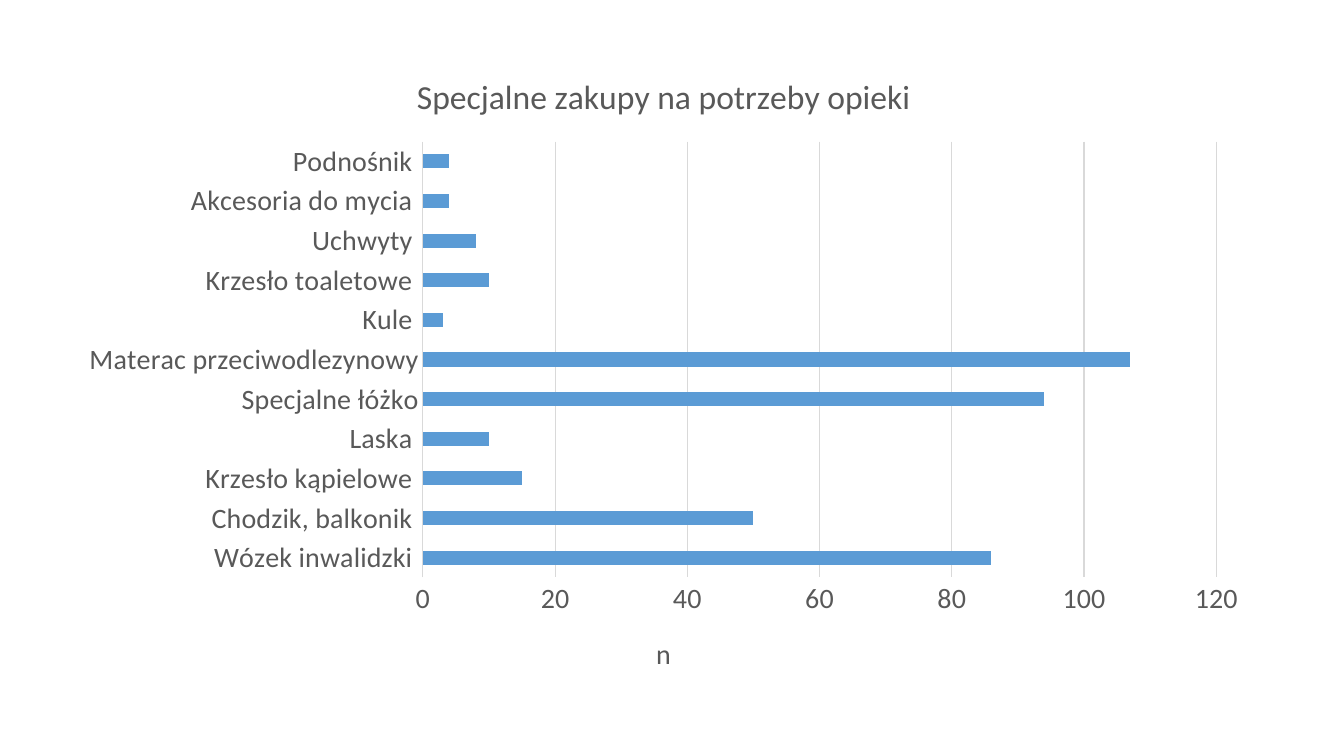
from pptx import Presentation
from pptx.chart.data import CategoryChartData
from pptx.dml.color import RGBColor
from pptx.enum.chart import XL_CHART_TYPE as ChartType, XL_TICK_MARK as TickMark
from pptx.util import Cm, Pt

BAR_BLUE = RGBColor(0x5B, 0x9B, 0xD5)
TEXT_GREY = RGBColor(0x59, 0x59, 0x59)
GRID_GREY = RGBColor(0xD9, 0xD9, 0xD9)

PURCHASES = {
    "Wózek inwalidzki ": 86,
    "Chodzik, balkonik ": 50,
    "Krzesło kąpielowe ": 15,
    "Laska ": 10,
    "Specjalne łóżko": 94,
    "Materac przeciwodlezynowy": 107,
    "Kule ": 3,
    "Krzesło toaletowe ": 10,
    "Uchwyty ": 8,
    "Akcesoria do mycia ": 4,
    "Podnośnik ": 4,
}


class PurchaseSlide:
    """Holds the chart style and the slide being built."""

    text_size, title_size = 20, 24
    font_name = "Calibri"

    def __init__(self, deck):
        self.slide = deck.slides.add_slide(deck.slide_layouts[6])

    def style_font(self, font, size):
        values = {"name": self.font_name, "size": Pt(size), "bold": False}
        for name, value in values.items():
            setattr(font, name, value)
        font.color.rgb = TEXT_GREY

    def style_line(self, line):
        line.color.rgb = GRID_GREY
        line.width = Pt(0.75)

    def add_title(self, owner, text, size):
        heading = owner.text_frame
        heading.text = text
        self.style_font(heading.paragraphs[0].runs[0].font, size)

    def style_axis(self, axis, values):
        for name, value in values.items():
            setattr(axis, name, value)
        axis.major_tick_mark = axis.minor_tick_mark = TickMark.NONE
        self.style_font(axis.tick_labels.font, self.text_size)

    def add_bar_chart(self, title, unit, counts, left, top, width, height):
        data = CategoryChartData(number_format="0")
        data.categories = list(counts)
        data.add_series("n", list(counts.values()))
        chart = self.slide.shapes.add_chart(
            ChartType.BAR_CLUSTERED, left, top, width, height, data).chart
        chart.has_legend = False
        self.style_font(chart.font, self.text_size)
        chart.has_title = True
        self.add_title(chart.chart_title, title, self.title_size)
        chart.chart_title.include_in_layout = False

        items, scale = chart.category_axis, chart.value_axis
        self.style_axis(items, {"has_major_gridlines": False})
        self.style_line(items.format.line)
        self.style_axis(scale, {"has_major_gridlines": True, "minimum_scale": 0,
                                "maximum_scale": 120, "major_unit": 20})
        self.style_line(scale.major_gridlines.format.line)
        scale.format.line.fill.background()
        self.add_title(scale.axis_title, unit, self.text_size)

        bars = chart.plots[0]
        bars.gap_width = 182
        bars.vary_by_categories = False
        fill = bars.series[0].format.fill
        fill.solid()
        fill.fore_color.rgb = BAR_BLUE


def main():
    deck = Presentation()
    deck.slide_width, deck.slide_height = Cm(33.87), Cm(19.05)
    PurchaseSlide(deck).add_bar_chart(
        "Specjalne zakupy na potrzeby opieki", "n", PURCHASES,
        Cm(1.65), Cm(1.24), Cm(30.15), Cm(16.33))
    deck.save("out.pptx")


if __name__ == "__main__":
    main()
